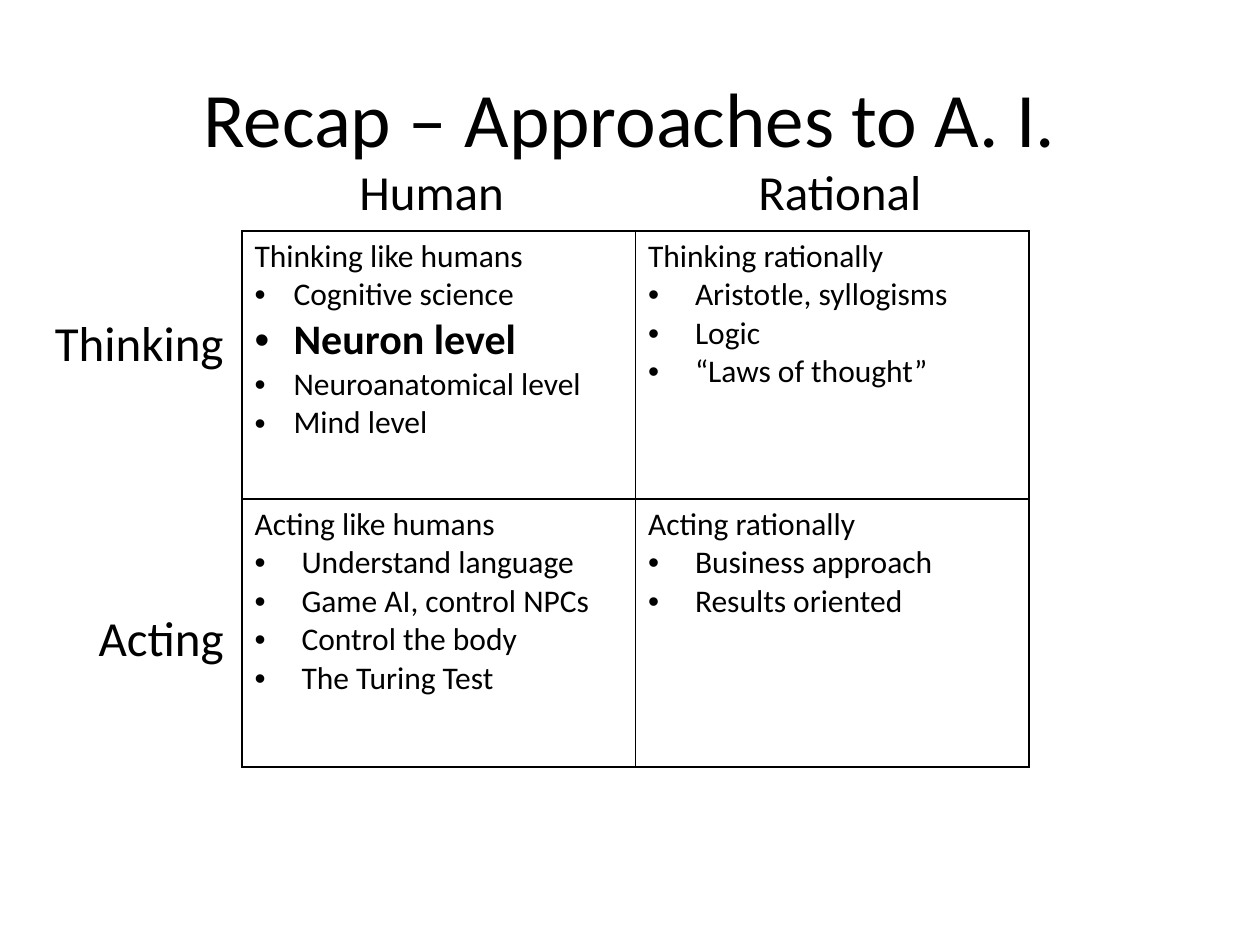
from lxml import etree
from pptx import Presentation
from pptx.dml.color import RGBColor
from pptx.enum.text import MSO_ANCHOR, PP_ALIGN
from pptx.oxml.ns import qn
from pptx.util import Emu, Pt

LEFT, CENTER, RIGHT = PP_ALIGN.LEFT, PP_ALIGN.CENTER, PP_ALIGN.RIGHT
MIDDLE = MSO_ANCHOR.MIDDLE
PX_PER_INCH = 126
FONT = "Calibri"
BLACK = "000000"
LABEL_SIZE, BODY_SIZE, EMPHASIS_SIZE = 28, 18, 24
LABEL_HEIGHT = 72
EMPHASIZED = "Neuron level"

# Each cell: heading, bullet indent in px, bullet points
APPROACHES = [
    [("Thinking like humans", 39,
      ["Cognitive science", EMPHASIZED, "Neuroanatomical level", "Mind level"]),
     ("Thinking rationally", 47,
      ["Aristotle, syllogisms", "Logic", "“Laws of thought”"])],
    [("Acting like humans", 47,
      ["Understand language", "Game AI, control NPCs", "Control the body",
       "The Turing Test"]),
     ("Acting rationally", 47, ["Business approach", "Results oriented"])],
]


def px(length):
    return Emu(round(length * 914400 / PX_PER_INCH))


def color(hex_code):
    return RGBColor.from_string(hex_code)


def style(paragraph, size, bold=False):
    for run in paragraph.runs:
        run.font.name = FONT
        run.font.size = Pt(size)
        run.font.bold = bold
        run.font.color.rgb = color(BLACK)


def add_label(slide, box, text, size, align):
    label = slide.shapes.add_textbox(*map(px, box))
    frame = label.text_frame
    frame.word_wrap = True
    frame.vertical_anchor = MIDDLE
    frame.text = text
    frame.paragraphs[0].alignment = align
    style(frame.paragraphs[0], size)


def add_bullet(paragraph, indent):
    properties = paragraph._p.get_or_add_pPr()
    properties.set("marL", str(px(indent)))
    properties.set("indent", str(-px(indent)))
    etree.SubElement(properties, qn("a:buFont"), typeface="Arial")
    etree.SubElement(properties, qn("a:buChar"), char="•")


def add_borders(cell):
    properties = cell._tc.get_or_add_tcPr()
    for position, side in enumerate(("lnL", "lnR", "lnT", "lnB")):
        line = etree.Element(qn(f"a:{side}"), w=str(Pt(1)))
        fill = etree.SubElement(line, qn("a:solidFill"))
        etree.SubElement(fill, qn("a:srgbClr"), val=BLACK)
        properties.insert(position, line)


def fill_cell(cell, heading, indent, points):
    cell.fill.background()
    add_borders(cell)
    frame = cell.text_frame
    frame.text = "\n".join([heading, *points])
    for index, paragraph in enumerate(frame.paragraphs):
        strong = paragraph.text == EMPHASIZED
        style(paragraph, EMPHASIS_SIZE if strong else BODY_SIZE, strong)
        if index:
            add_bullet(paragraph, indent)


def add_approach_table(slide, box):
    left, top, width, height = box
    rows, columns = len(APPROACHES), len(APPROACHES[0])
    table = slide.shapes.add_table(rows, columns, *map(px, box)).table
    table.first_row = table.horz_banding = False
    for column in table.columns:
        column.width = px(width / columns)
    for row in table.rows:
        row.height = px(height / rows)
    for r, approaches in enumerate(APPROACHES):
        for c, approach in enumerate(approaches):
            fill_cell(table.cell(r, c), *approach)


def add_matrix(slide, box):
    left, top, width, height = box
    add_approach_table(slide, box)
    # Column headings
    for offset, heading in ((105, "Human"), (504, "Rational")):
        add_label(slide, (left + offset, top - 76, 200, LABEL_HEIGHT),
                  heading, LABEL_SIZE, LEFT)
    # Row headings
    for offset, heading in ((75, "Thinking"), (370, "Acting")):
        add_label(slide, (left - 206, top + offset, 200, LABEL_HEIGHT),
                  heading, LABEL_SIZE, RIGHT)


def main():
    deck = Presentation()
    deck.slide_width, deck.slide_height = px(1260), px(945)
    slide = deck.slides.add_slide(deck.slide_layouts[6])
    add_label(slide, (63, 38, 1134, 158), "Recap – Approaches to A. I.", 44, CENTER)
    add_matrix(slide, (242, 231, 787, 536))
    deck.save("out.pptx")


if __name__ == "__main__":
    main()
